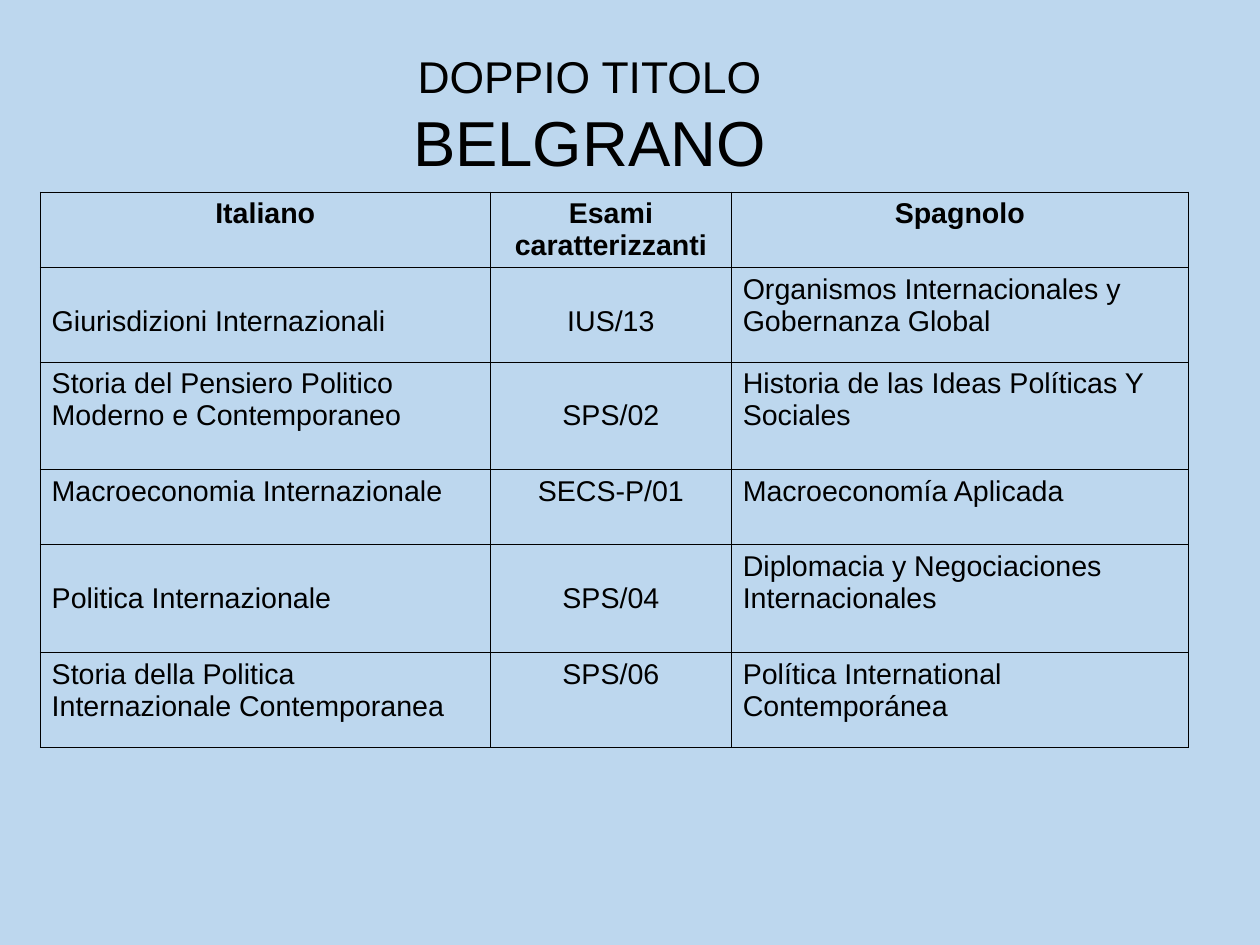
from dataclasses import dataclass

from lxml import etree
from pptx import Presentation
from pptx import util as u
from pptx.dml.color import RGBColor
from pptx.enum import text
from pptx.oxml import ns

BACKGROUND = RGBColor(0xBD, 0xD7, 0xEE)
BLACK = RGBColor(0, 0, 0)
FONT = "Arial"
WIDTH, HEIGHT = u.Cm(28), u.Cm(21)
LEFT, CENTER = text.PP_ALIGN.LEFT, text.PP_ALIGN.CENTER
CELL_TOP, TEXT_LINE = u.Inches(0.05), u.Inches(0.28)

# Shares of the slide, in percent
COLUMNS = (35.72, 19.13, 36.27)
TABLE_LEFT, TABLE_TOP = 3.2, 20.33


@dataclass
class ExamRow:
    italian: str
    code: str
    spanish: str
    height: float
    lowered: tuple[int, ...] = ()  # columns whose text starts one line down
    header: bool = False


ROWS = [
    ExamRow("Italiano", "Esami caratterizzanti", "Spagnolo", 7.94, header=True),
    ExamRow("Giurisdizioni Internazionali", "IUS/13",
            "Organismos Internacionales y Gobernanza Global", 10.02, (0, 1)),
    ExamRow("Storia del Pensiero Politico Moderno e Contemporaneo", "SPS/02",
            "Historia de las Ideas Políticas Y Sociales", 11.39, (1,)),
    ExamRow("Macroeconomia Internazionale", "SECS-P/01",
            "Macroeconomía Aplicada", 7.94),
    ExamRow("Politica Internazionale", "SPS/04",
            "Diplomacia y Negociaciones Internacionales", 11.39, (0, 1)),
    ExamRow("Storia della Politica Internazionale Contemporanea", "SPS/06",
            "Política International Contemporánea", 10.1),
]


def across(percent: float) -> int:
    return u.Emu(round(WIDTH * percent / 100))


def down(percent: float) -> int:
    return u.Emu(round(HEIGHT * percent / 100))


def add_text(p, content: str, *, size: float = 18, bold: bool = False, align=LEFT) -> None:
    p.alignment = align
    r = p.add_run()
    r.text = content
    r.font.name, r.font.size, r.font.bold = FONT, u.Pt(size), bold
    r.font.color.rgb = BLACK


def add_borders(cell) -> None:
    """Outline all four sides of the cell; call before setting its fill."""
    props = cell._tc.get_or_add_tcPr()
    for side in ("lnL", "lnR", "lnT", "lnB"):
        line = etree.SubElement(props, ns.qn(f"a:{side}"), w=str(u.Pt(0.75)))
        fill = etree.SubElement(line, ns.qn("a:solidFill"))
        etree.SubElement(fill, ns.qn("a:srgbClr"), val=str(BLACK))


def add_title(slide) -> None:
    sp = slide.shapes.add_textbox(across(19.96), down(3.8), across(53.63), down(16.57))
    tf = sp.text_frame
    tf.word_wrap = True
    tf.vertical_anchor = text.MSO_ANCHOR.MIDDLE
    tf.margin_left = tf.margin_right = tf.margin_top = tf.margin_bottom = 0
    p = tf.paragraphs[0]
    add_text(p, "DOPPIO TITOLO ", size=28, align=CENTER)
    add_text(p, "BELGRANO", size=40, align=CENTER)


def add_exam_table(slide) -> None:
    table = slide.shapes.add_table(
        len(ROWS), len(COLUMNS), across(TABLE_LEFT), down(TABLE_TOP),
        across(sum(COLUMNS)), down(sum(row.height for row in ROWS))).table
    table.first_row = table.horz_banding = False
    for column, share in zip(table.columns, COLUMNS):
        column.width = across(share)
    for i, row in enumerate(ROWS):
        table.rows[i].height = down(row.height)
        for j, content in enumerate((row.italian, row.code, row.spanish)):
            cell = table.cell(i, j)
            cell.margin_top = CELL_TOP + (TEXT_LINE if j in row.lowered else 0)
            add_borders(cell)
            cell.fill.background()
            add_text(cell.text_frame.paragraphs[0], content, bold=row.header,
                     align=CENTER if row.header or j == 1 else LEFT)


def main() -> None:
    prs = Presentation()
    prs.slide_width, prs.slide_height = WIDTH, HEIGHT
    slide = prs.slides.add_slide(prs.slide_layouts[6])
    slide.background.fill.solid()
    slide.background.fill.fore_color.rgb = BACKGROUND
    add_exam_table(slide)
    add_title(slide)
    prs.save("out.pptx")


if __name__ == "__main__":
    main()
